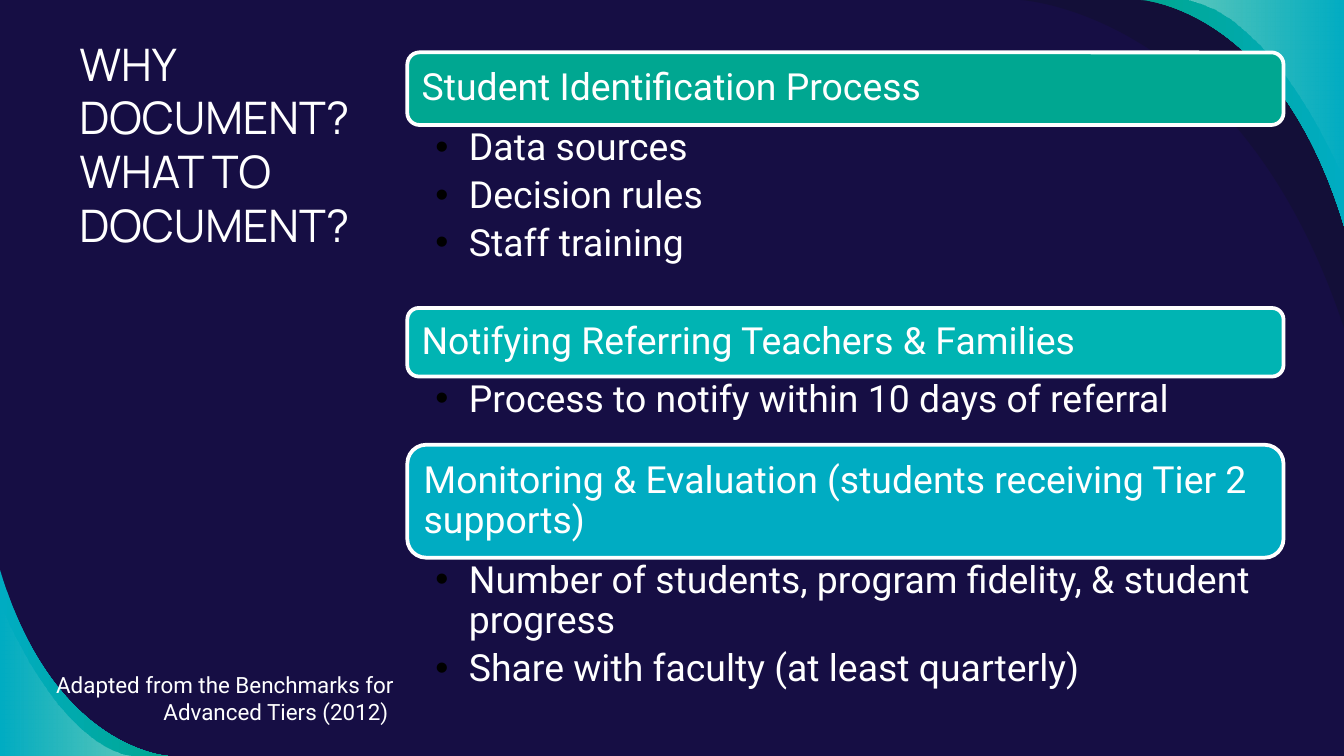
"""Build the slide on what to document and why."""
from lxml.etree import SubElement
from pptx import Presentation
from pptx.dml.color import RGBColor
from pptx.enum.shapes import MSO_SHAPE as SHAPE
from pptx.enum.text import MSO_ANCHOR as ANCHOR, PP_ALIGN as ALIGN
from pptx.oxml.ns import qn
from pptx.util import Pt


def rgb(value):
    return RGBColor.from_string(value)


def format_text(tf, size, font, insets, spacing=1.0):
    tf.word_wrap = True
    tf.margin_left, tf.margin_top, tf.margin_right, tf.margin_bottom = [Pt(i) for i in insets]
    for p in tf.paragraphs:
        p.line_spacing = spacing
        for r in p.runs:
            r.font.size, r.font.name = Pt(size), font
            r.font.color.rgb = rgb("FFFFFF")


W, H = 720, 405
WHITE, BLUE, GREEN = "FFFFFF", "00ACC2", "00A791"
prs = Presentation()
prs.slide_width, prs.slide_height = Pt(W), Pt(H)
s = prs.slides.add_slide(prs.slide_layouts[5])
s.background.fill.solid()
s.background.fill.fore_color.rgb = rgb("160E44")

swooshes = [
    ([(90, 405), (90, 405), (28.8, 401.8), (0, 305.3)], (0, H), [(BLUE, 100), (GREEN, 100)]),
    ([(0, 324), (0, 324), (30.2, 400.3), (71.3, 405)], (0, H), [(WHITE, 0), (WHITE, 36)]),
    ([(720, 175.7), (663.8, 5.8), (546.5, 0), (546.5, 0)], (W, 0), [("12102F", 54)]),
    ([(611.3, 0), (611.3, 0), (684.7, 3.6), (720, 121)], (W, 0), [(GREEN, 100), (BLUE, 100)]),
    ([(720, 97.2), (720, 97.2), (683.3, 5.8), (633.6, 0)], (W, 0), [(WHITE, 36), (WHITE, 0)]),
]
for curve, corner, stops in swooshes:
    start, *bends, end, corner = [(Pt(x), Pt(y)) for x, y in curve + [corner]]
    fb = s.shapes.build_freeform(*start, scale=1.0)
    fb.add_line_segments([end, corner], close=True)
    sp = fb.convert_to_shape()
    sp.shadow.inherit = False
    edge = next(sp._element.iter(qn("a:lnTo")))
    edge.tag = qn("a:cubicBezTo")
    for i, (x, y) in enumerate(bends):
        pt = SubElement(edge, qn("a:pt"), x=str(x - sp.left), y=str(y - sp.top))
        edge.insert(i, pt)
    if len(stops) == 1:
        sp.fill.solid()
        sp.fill.fore_color.rgb = rgb(stops[0][0])
    else:
        sp.fill.gradient()
        sp.fill.gradient_angle = 0
        for stop, (colour, _) in zip(sp.fill.gradient_stops, stops):
            stop.color.rgb = rgb(colour)
    for clr, (_, alpha) in zip(sp._element.spPr.iter(qn("a:srgbClr")), stops):
        SubElement(clr, qn("a:alpha"), val=str(alpha * 1000))
    sp.line.fill.background()

title = s.shapes.title
title.left, title.top, title.width, title.height = Pt(35.3), Pt(12.2), Pt(178.6), Pt(63.4)
title.text_frame.text = "WHY DOCUMENT? WHAT TO DOCUMENT?"
title.text_frame.vertical_anchor = ANCHOR.TOP
title.text_frame.paragraphs[0].alignment = ALIGN.LEFT
format_text(title.text_frame, 24, "Manrope", (7.2, 7.2, 7.2, 7.2))

LEFT, WIDTH = 218.2, 469.4
sections = [
    ("Student Identification Process", GREEN, 38.9, 97.9,
     ["Data sources", "Decision rules", "Staff training"], 28.1),
    ("Notifying Referring Teachers & Families", "00B4B3", 36.7, 36.7,
     ["Process to notify within 10 days of referral"], 165),
    ("Monitoring & Evaluation (students receiving Tier 2 supports)", BLUE, 60.5, 93.6,
     ["Number of students, program fidelity, & student progress",
      "Share with faculty (at least quarterly)"], 238.3),
]
for heading, colour, head_h, body_h, items, top in sections:
    sp = s.shapes.add_shape(SHAPE.ROUNDED_RECTANGLE, Pt(LEFT), Pt(top), Pt(WIDTH), Pt(head_h))
    sp.shadow.inherit = False
    sp.fill.solid()
    sp.fill.fore_color.rgb = rgb(colour)
    sp.line.color.rgb = rgb(WHITE)
    sp.line.width = Pt(2)
    tf = sp.text_frame
    tf.text = heading
    tf.vertical_anchor = ANCHOR.MIDDLE
    tf.paragraphs[0].alignment = ALIGN.LEFT
    format_text(tf, 20, "Roboto", (5.8, 5.8, 5.8, 5.8), 0.9)

    tf = s.shapes.add_textbox(Pt(LEFT), Pt(top + head_h), Pt(WIDTH), Pt(body_h)).text_frame
    tf.text = "\n".join(items)
    for p in tf.paragraphs:
        pPr = p._p.get_or_add_pPr()
        pPr.set("marL", str(Pt(18)))
        pPr.set("indent", str(Pt(-18)))
        pPr.set("lvl", "1")
        SubElement(SubElement(pPr, qn("a:buClr")), qn("a:srgbClr"), val="000000")
        SubElement(pPr, qn("a:buFont"), typeface="Arial")
        SubElement(pPr, qn("a:buChar"), char="•")
        p.space_after = Pt(4)
    format_text(tf, 20, "Roboto", (15, 1.9, 11.5, 2.2), 0.9)

tf = s.shapes.add_textbox(Pt(-15.1), Pt(356), Pt(233.3), Pt(36)).text_frame
tf.text = "Adapted from the Benchmarks for Advanced Tiers (2012) "
tf.paragraphs[0].alignment = ALIGN.RIGHT
format_text(tf, 12, "Roboto", (7.2, 3.6, 7.2, 3.6))

prs.save("out.pptx")
